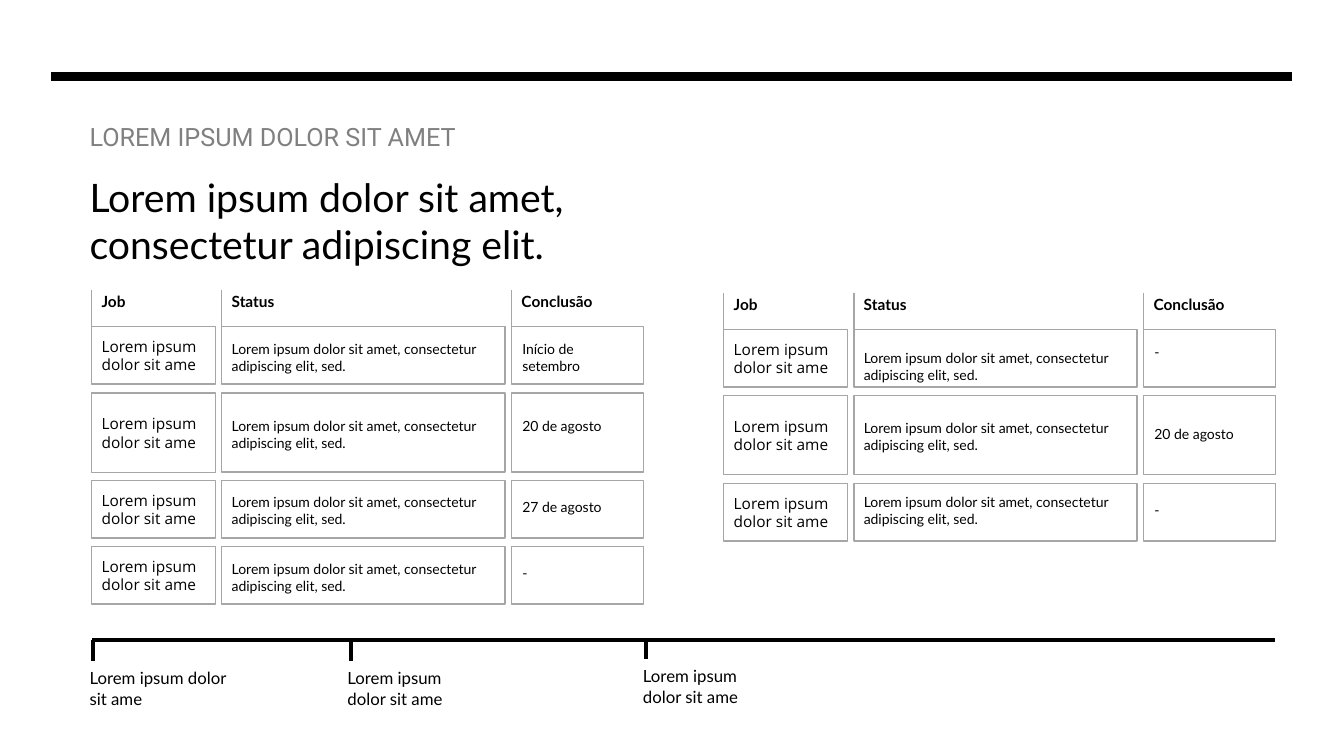
from dataclasses import dataclass

from lxml import etree
from pptx import Presentation
from pptx.dml.color import RGBColor
from pptx.enum import shapes, text
from pptx.oxml import ns
from pptx.util import Pt

BLACK, GREY, RULE = "000000", "808080", "A6A6A6"
JOB = "Lorem ipsum dolor sit ame"
STATUS = "Lorem ipsum dolor sit amet, consectetur adipiscing elit, sed."


@dataclass
class Column:
    heading: str
    left: float
    width: float
    heading_width: float


@dataclass
class Row:
    top: float
    height: float
    status_top: float
    done_top: float
    done: str


@dataclass
class Panel:
    dx: float
    dy: float
    rows: list[Row]


@dataclass
class Milestone:
    left: float
    top: float
    width: float


COLUMNS = [
    Column("Job", 65.5, 88.5, 57.6),
    Column("Status", 158.4, 202.3, 57.6),
    Column("Conclusão", 365.4, 94.3, 72.7),
]
PANELS = [
    Panel(0, 0, [
        Row(233.4, 41, 239.8, 239.8, "Início de setembro"),
        Row(280.8, 56.5, 294.5, 294.5, "20 de agosto"),
        Row(343.4, 41, 349.2, 352.8, "27 de agosto"),
        Row(390.4, 41, 396.7, 399.6, "-"),
    ]),
    Panel(451.5, 2, [
        Row(235.4, 41, 246.2, 241.9, "-"),
        Row(282.6, 56.5, 295.9, 300.2, "20 de agosto"),
        Row(345.4, 41, 349.2, 355, "-"),
    ]),
]
MILESTONES = [
    Milestone(66.4, 457.2, 121),
    Milestone(250.6, 457.2, 104.4),
    Milestone(461.7, 455.8, 97.9),
]


def color(value: str) -> RGBColor:
    return RGBColor.from_string(value)


def write(sp, content: str, size: float, font: str = "Lato",
          fill: str = BLACK, bold: bool = False) -> None:
    tf = sp.text_frame
    tf.text = content
    tf.word_wrap = True
    p = tf.paragraphs[0]
    p.alignment = text.PP_ALIGN.LEFT
    r = p.runs[0]
    r.font.name = font
    r.font.size = Pt(size)
    r.font.bold = bold
    r.font.color.rgb = color(fill)


def add_text(s, left: float, top: float, width: float, height: float,
             content: str, size: float, font: str = "Lato",
             fill: str = BLACK, bold: bool = False) -> None:
    sp = s.shapes.add_textbox(Pt(left), Pt(top), Pt(width), Pt(height))
    write(sp, content, size, font, fill, bold)
    sp.text_frame.auto_size = text.MSO_AUTO_SIZE.SHAPE_TO_FIT_TEXT


def add_line(s, x1: float, y1: float, x2: float, y2: float,
             fill: str, width: float) -> None:
    line = s.shapes.add_connector(
        shapes.MSO_CONNECTOR.STRAIGHT, Pt(x1), Pt(y1), Pt(x2), Pt(y2))
    line.line.color.rgb = color(fill)
    line.line.width = Pt(width)
    etree.SubElement(line._element.spPr, ns.qn("a:effectLst"))


def add_cell(s, left: float, top: float, width: float, height: float,
             kind=shapes.MSO_SHAPE.RECTANGLE):
    sp = s.shapes.add_shape(kind, Pt(left), Pt(top), Pt(width), Pt(height))
    sp.shadow.inherit = False
    sp.fill.background()
    sp.line.color.rgb = color(RULE)
    sp.line.width = Pt(1)
    return sp


def add_job(s, left: float, row: Row, width: float) -> None:
    sp = add_cell(s, left, row.top, width, row.height,
                  shapes.MSO_SHAPE.ROUNDED_RECTANGLE)
    sp.adjustments[0] = 0
    write(sp, JOB, 11, "Open Sans")
    sp.text_frame.vertical_anchor = text.MSO_ANCHOR.MIDDLE


def add_panel(s, panel: Panel) -> None:
    for col in COLUMNS:
        left = col.left + panel.dx
        add_line(s, left, 235.2 + panel.dy, left, 207.2 + panel.dy, RULE, 1)
        add_text(s, left, 205.2 + panel.dy, col.heading_width, 20.9,
                 col.heading, 11, bold=True)
    job, status, done = COLUMNS
    for row in panel.rows:
        add_job(s, job.left + panel.dx, row, job.width)
        for col in (status, done):
            add_cell(s, col.left + panel.dx, row.top, col.width, row.height)
        add_text(s, status.left + panel.dx, row.status_top, 198, 31.7,
                 STATUS, 10)
        add_text(s, done.left + panel.dx + 0.6, row.done_top, 86.4, 19.4,
                 row.done, 10)


def add_milestone(s, mark: Milestone) -> None:
    x = mark.left
    top = mark.top
    add_line(s, x, top, x, top + 14.6, BLACK, 3)
    add_text(s, x - 9.5, top + 16.5, mark.width, 36, JOB, 12)


def main() -> None:
    prs = Presentation()
    prs.slide_width, prs.slide_height = Pt(960), Pt(540)
    s = prs.slides.add_slide(prs.slide_layouts[6])
    add_line(s, 923, 54.7, 36.7, 54.7, BLACK, 6)
    add_text(s, 56.9, 82.8, 422.6, 28.8, "LOREM IPSUM DOLOR SIT AMET",
             18, "Roboto", GREY)
    add_text(s, 56.9, 120.2, 442.8, 74.9,
             "Lorem ipsum dolor sit amet, consectetur adipiscing elit.", 28)
    for panel in PANELS:
        add_panel(s, panel)
    add_line(s, 910.8, 457.2, 65.5, 457.2, BLACK, 3)
    for mark in MILESTONES:
        add_milestone(s, mark)
    prs.save("out.pptx")


if __name__ == "__main__":
    main()
